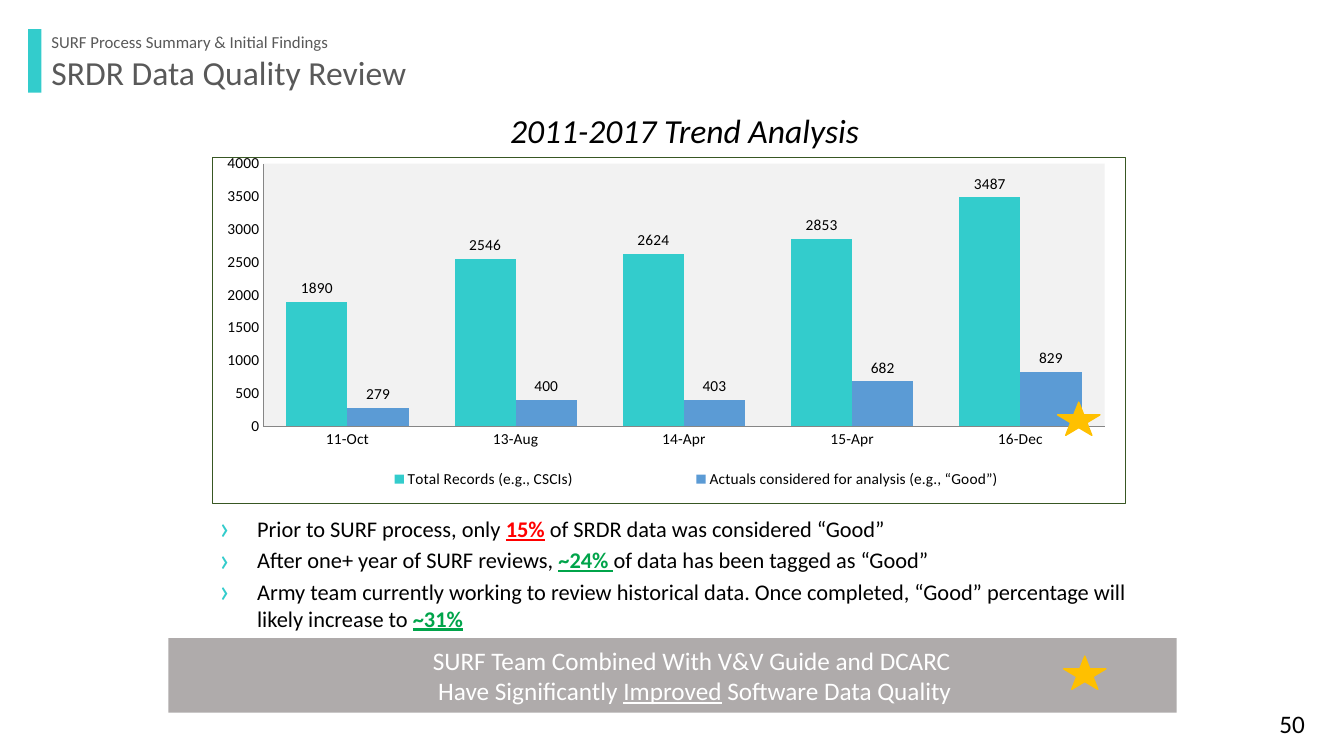
from dataclasses import dataclass

from lxml import etree
from pptx import Presentation
from pptx import util as u
from pptx.chart import data as chartdata
from pptx.dml.color import RGBColor
from pptx.enum import chart as charts, shapes, text
from pptx.oxml import parse_xml
from pptx.oxml import ns

WIDTH, HEIGHT = u.Inches(13.33), u.Inches(7.5)
FONT = "Calibri"
TEAL, BLUE, GOLD, GREY = "33CCCC", "5B9BD5", "FFC000", "595959"
RED, GREEN, BLACK, WHITE = "FF0000", "00A44A", "000000", "FFFFFF"


@dataclass(frozen=True)
class Area:
    """Percentages of the slide's width and height."""
    left: float
    top: float
    width: float
    height: float

    def lengths(self) -> tuple[int, int, int, int]:
        return (int(WIDTH * self.left / 100), int(HEIGHT * self.top / 100),
                int(WIDTH * self.width / 100), int(HEIGHT * self.height / 100))


@dataclass(frozen=True)
class Span:
    words: str
    colour: str = BLACK
    bold: bool = False
    underline: bool = False
    italic: bool = False


@dataclass(frozen=True)
class Label:
    area: Area
    size: int
    span: Span
    spacing: float = 1.0


@dataclass(frozen=True)
class Series:
    name: str
    values: tuple[int, ...]
    colour: str


KICKER = Label(Area(3.08, 3.87, 35.48, 4), 12,
               Span("SURF Process Summary & Initial Findings", GREY), 0.9)
TITLE = Label(Area(3.08, 6.8, 39.61, 7.33), 24, Span("SRDR Data Quality Review", GREY), 0.9)
HEADING = Label(Area(37.21, 13.87, 29.63, 6.67), 24,
                Span("2011-2017 Trend Analysis", italic=True))
PAGE_NUMBER = Label(Area(94.45, 93.07, 4.65, 5.33), 18, Span("50"))

ACCENT_AREA = Area(2.1, 3.87, 0.98, 8.4)
BANNER_AREA = Area(12.53, 84.4, 75.02, 9.87)
FINDINGS_AREA = Area(15.53, 66.8, 69.24, 22.27)
CHART_AREA = Area(15.75, 20.4, 68.04, 46.27)
STAR_AREAS = [Area(78.69, 53.2, 3.15, 4.4), Area(79.14, 86.8, 3.15, 4.4)]

FINDINGS = [
    [Span("Prior to SURF process, only "), Span("15%", RED, True, True),
     Span(" of SRDR data was considered “Good”")],
    [Span("After one+ year of SURF reviews, "), Span("~24% ", GREEN, True, True),
     Span("of data has been tagged as “Good”")],
    [Span("Army team currently working to review historical data. Once completed, "
          "“Good” percentage will likely increase to "), Span("~31%", GREEN, True, True)],
]
BANNER = [
    [Span("SURF Team Combined With V&V Guide and DCARC ", WHITE)],
    [Span("Have Significantly ", WHITE), Span("Improved", WHITE, underline=True),
     Span(" Software Data Quality", WHITE)],
]
DATES = ["11-Oct", "13-Aug", "14-Apr", "15-Apr", "16-Dec"]
RECORDS = [
    Series("Total Records (e.g., CSCIs)", (1890, 2546, 2624, 2853, 3487), TEAL),
    Series("Actuals considered for analysis (e.g., “Good”)", (279, 400, 403, 682, 829), BLUE),
]


def rgb(colour: str) -> RGBColor:
    return RGBColor.from_string(colour)


def place(shape, area: Area) -> None:
    shape.left, shape.top, shape.width, shape.height = area.lengths()


def write(para, spans: list[Span], size: int) -> None:
    for span in spans:
        run = para.add_run()
        run.text = span.words
        font = run.font
        font.name, font.size = FONT, u.Pt(size)
        font.bold, font.italic, font.underline = span.bold, span.italic, span.underline
        font.color.rgb = rgb(span.colour)


def fill_label(box, label: Label, wrap: bool = True) -> None:
    frame = box.text_frame
    frame.auto_size = text.MSO_AUTO_SIZE.NONE
    frame.word_wrap = wrap
    frame.vertical_anchor = text.MSO_ANCHOR.TOP
    para = frame.paragraphs[0]
    para.alignment = text.PP_ALIGN.LEFT
    para.line_spacing = label.spacing
    write(para, [label.span], label.size)


def add_label(page, label: Label) -> None:
    fill_label(page.shapes.add_textbox(*label.area.lengths()), label)


def add_block(page, kind, area: Area, colour: str, outlined: bool = False):
    block = page.shapes.add_shape(kind, *area.lengths())
    block.shadow.inherit = False
    block.fill.solid()
    block.fill.fore_color.rgb = rgb(colour)
    if outlined:
        block.line.color.rgb = rgb(colour)
        block.line.width = u.Pt(1)
    else:
        block.line.fill.background()
    return block


def indent(para, left: float, first: float) -> None:
    properties = para._p.get_or_add_pPr()
    properties.set("marL", str(u.Inches(left)))
    properties.set("indent", str(u.Inches(first)))


def add_bullet(para) -> None:
    properties = para._p.get_or_add_pPr()
    colour = etree.SubElement(properties, ns.qn("a:buClr"))
    etree.SubElement(colour, ns.qn("a:srgbClr"), val=TEAL)
    etree.SubElement(properties, ns.qn("a:buSzPct"), val="150000")
    etree.SubElement(properties, ns.qn("a:buFont"), typeface=FONT)
    etree.SubElement(properties, ns.qn("a:buChar"), char="›")


def fill_findings(box) -> None:
    place(box, FINDINGS_AREA)
    frame = box.text_frame
    frame.auto_size = text.MSO_AUTO_SIZE.NONE
    frame.word_wrap = True
    frame.margin_left = frame.margin_right = u.Inches(0.1)
    frame.margin_top = frame.margin_bottom = u.Inches(0.1)
    for index, spans in enumerate(FINDINGS):
        para = frame.add_paragraph() if index else frame.paragraphs[0]
        indent(para, 0.38, -0.38)
        add_bullet(para)
        para.space_before = u.Pt(3.2 if index else 0)
        write(para, spans, 16)


def add_banner(page) -> None:
    banner = add_block(page, shapes.MSO_SHAPE.RECTANGLE, BANNER_AREA, "AFABAB")
    frame = banner.text_frame
    frame.word_wrap = True
    frame.vertical_anchor = text.MSO_ANCHOR.MIDDLE
    for index, spans in enumerate(BANNER):
        para = frame.add_paragraph() if index else frame.paragraphs[0]
        para.alignment = text.PP_ALIGN.CENTER
        indent(para, 0.44, 0)
        write(para, spans, 18)


def set_layout(part, shares: tuple[float, ...], inner: bool = False):
    target = '<c:layoutTarget val="inner"/>' if inner else ""
    modes = "".join(f'<c:{side}Mode val="edge"/>' for side in "xy")
    sizes = "".join(f'<c:{side} val="{share}"/>' for side, share in zip("xywh", shares))
    layout = parse_xml(f'<c:layout {ns.nsdecls("c")}><c:manualLayout>{target}{modes}{sizes}'
                       '</c:manualLayout></c:layout>')
    for old in part.findall(ns.qn("c:layout")):
        part.remove(old)
    part.insert(1 if part.tag == ns.qn("c:legend") else 0, layout)


def shape_properties(fill: str, line: str = ""):
    paint = f'<a:solidFill><a:srgbClr val="{fill}"/></a:solidFill>'
    edge = (f'<a:ln w="9525"><a:solidFill><a:srgbClr val="{line}"/></a:solidFill></a:ln>'
            if line else "")
    return parse_xml(f'<c:spPr {ns.nsdecls("c", "a")}>{paint}{edge}</c:spPr>')


def add_trend_chart(page) -> None:
    content = chartdata.CategoryChartData()
    content.categories = DATES
    for series in RECORDS:
        content.add_series(series.name, series.values)
    chart = page.shapes.add_chart(charts.XL_CHART_TYPE.COLUMN_CLUSTERED,
                                  *CHART_AREA.lengths(), content).chart
    chart.has_title = False
    chart.font.name, chart.font.size = FONT, u.Pt(11)
    chart.font.color.rgb = rgb(BLACK)
    chart.has_legend = True
    chart.legend.position = charts.XL_LEGEND_POSITION.BOTTOM
    chart.legend.include_in_layout = False
    plot = chart.plots[0]
    plot.gap_width, plot.overlap, plot.vary_by_categories = 75, 0, False
    for drawn, series in zip(plot.series, RECORDS):
        drawn.format.fill.solid()
        drawn.format.fill.fore_color.rgb = rgb(series.colour)
        drawn.data_labels.show_value = True
        drawn.data_labels.position = charts.XL_LABEL_POSITION.OUTSIDE_END
    for axis in (chart.category_axis, chart.value_axis):
        axis.has_major_gridlines = False
        axis.major_tick_mark = axis.minor_tick_mark = charts.XL_TICK_MARK.NONE
        axis.format.line.color.rgb = rgb("868686")
    scale = chart.value_axis
    scale.minimum_scale, scale.maximum_scale, scale.major_unit = 0, 4000, 500
    space = chart._chartSpace
    area = space.chart.plotArea
    set_layout(area, (0.056, 0.019, 0.921, 0.758), inner=True)
    set_layout(chart.legend._element, (0.07, 0.88, 0.92, 0.1))
    area.append(shape_properties("F2F2F2"))
    space.chart.addnext(shape_properties(WHITE, "385723"))


def main() -> None:
    deck = Presentation()
    deck.slide_width, deck.slide_height = WIDTH, HEIGHT
    page = deck.slides.add_slide(deck.slide_layouts[1])
    add_block(page, shapes.MSO_SHAPE.RECTANGLE, ACCENT_AREA, TEAL)
    add_banner(page)
    place(page.shapes.title, TITLE.area)
    fill_label(page.shapes.title, TITLE)
    fill_findings(page.placeholders[1])
    add_trend_chart(page)
    for area in STAR_AREAS:
        add_block(page, shapes.MSO_SHAPE.STAR_5_POINT, area, GOLD, outlined=True)
    for label in (KICKER, HEADING, PAGE_NUMBER):
        add_label(page, label)
    deck.save("out.pptx")


if __name__ == "__main__":
    main()
